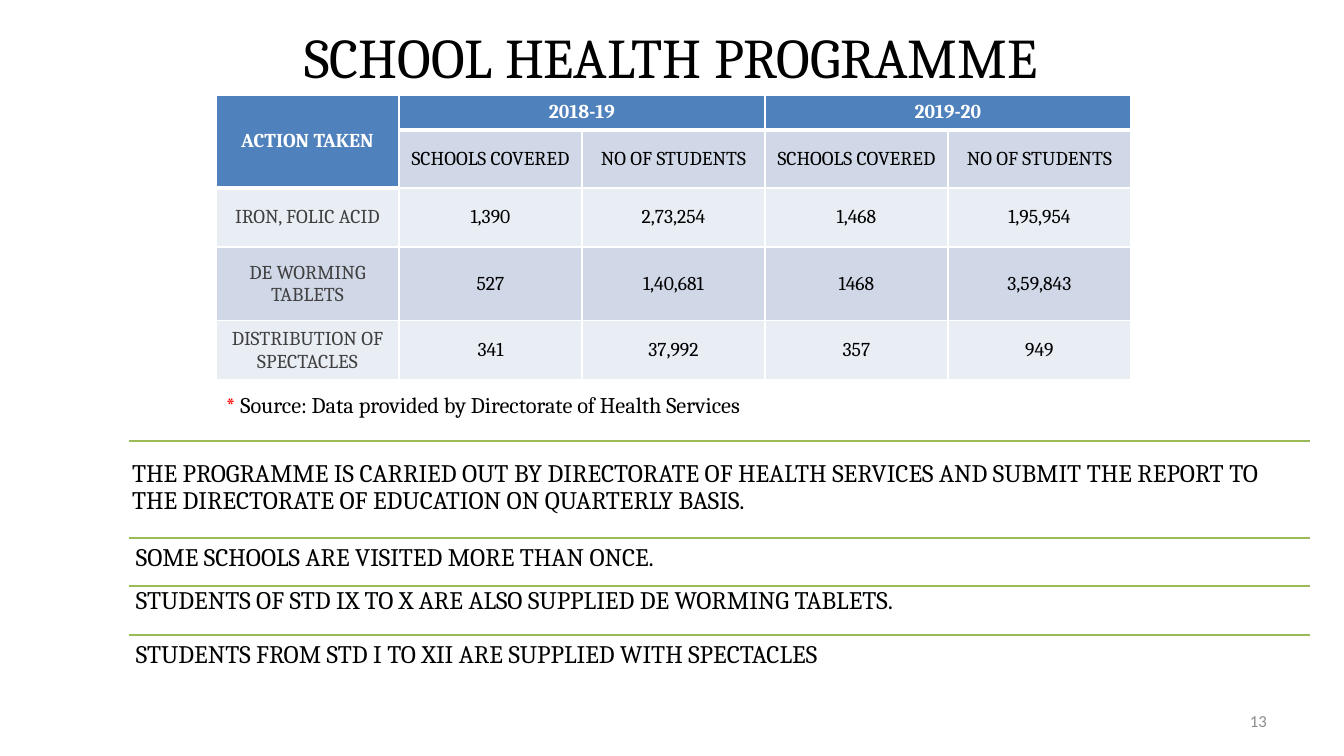
from dataclasses import dataclass

from lxml import etree
from pptx import Presentation
from pptx.dml.color import RGBColor
from pptx.enum.shapes import MSO_CONNECTOR
from pptx.enum.text import MSO_ANCHOR, PP_ALIGN
from pptx.oxml.ns import qn
from pptx.slide import Slide
from pptx.table import _Cell
from pptx.text.text import TextFrame
from pptx.util import Emu, Pt

STRAIGHT = MSO_CONNECTOR.STRAIGHT
TOP, MIDDLE = MSO_ANCHOR.TOP, MSO_ANCHOR.MIDDLE
LEFT, CENTER, RIGHT = PP_ALIGN.LEFT, PP_ALIGN.CENTER, PP_ALIGN.RIGHT

EMU_PER_PX = 914400 / 100.8


def px(n: int) -> Emu:
    return Emu(round(n * EMU_PER_PX))


@dataclass(frozen=True)
class Theme:
    font: str = "Cambria"
    number_font: str = "Calibri"
    black: str = "000000"
    white: str = "FFFFFF"
    red: str = "FF0000"
    grey: str = "8C8C8C"
    label: str = "404040"
    rule: str = "9BBB59"
    header: str = "4F81BD"
    band_dark: str = "D0D8E8"
    band_light: str = "E9EDF4"
    title_pt: int = 40
    body_pt: int = 18
    note_pt: int = 16
    table_pt: int = 14
    number_pt: int = 12
    rule_pt: int = 2
    border_pt: int = 1
    header_border_pt: int = 3


THEME = Theme()


@dataclass(frozen=True)
class Run:
    text: str
    size: int
    color: str = THEME.black
    bold: bool = False
    font: str = THEME.font


@dataclass(frozen=True)
class TextBox:
    left: int
    top: int
    width: int
    height: int
    runs: tuple[Run, ...]
    align: PP_ALIGN = LEFT
    anchor: MSO_ANCHOR = MIDDLE
    insets: tuple[int, int, int, int] = (10, 5, 10, 5)
    line_spacing: float = 1.0
    wrap: bool = True


@dataclass(frozen=True)
class Remark:
    """A statement under a green rule."""
    rule_y: int
    top: int
    height: int
    text: str
    inset: int = 7
    inset_top: int = 7


REMARK_LEFT, REMARK_WIDTH = 129, 1181
REMARKS = (
    Remark(441, 441, 97, "THE PROGRAMME IS CARRIED OUT BY DIRECTORATE OF HEALTH SERVICES AND "
           "SUBMIT THE REPORT TO THE DIRECTORATE OF EDUCATION ON QUARTERLY BASIS.", 3, 20),
    Remark(538, 538, 47, "SOME SCHOOLS ARE VISITED MORE THAN ONCE."),
    Remark(586, 581, 49, "STUDENTS OF STD IX TO X ARE ALSO SUPPLIED DE WORMING TABLETS."),
    Remark(635, 635, 98, "STUDENTS FROM STD I TO XII ARE SUPPLIED WITH SPECTACLES"),
)

TEXT_BOXES = (
    TextBox(118, 12, 1106, 88, (Run("SCHOOL HEALTH PROGRAMME", THEME.title_pt),), CENTER),
    TextBox(216, 386, 601, 37, (
        Run("* ", THEME.note_pt, THEME.red),
        Run("Source: Data provided by Directorate of Health Services", THEME.note_pt),
    ), anchor=TOP, wrap=False),
    TextBox(964, 701, 313, 40,
            (Run("13", THEME.number_pt, THEME.grey, font=THEME.number_font),), RIGHT),
)

TABLE_LEFT, TABLE_TOP, COLUMN_WIDTH = 216, 95, 183
ROW_HEIGHTS = (35, 58, 59, 74, 59)
MEASURES = ("SCHOOLS COVERED", "NO OF STUDENTS")
TABLE_ROWS = (
    ("ACTION TAKEN", "2018-19", "", "2019-20", ""),
    ("", *MEASURES, *MEASURES),
    ("IRON, FOLIC ACID", "1,390", "2,73,254", "1,468", "1,95,954"),
    ("DE WORMING TABLETS", "527", "1,40,681", "1468", "3,59,843"),
    ("DISTRIBUTION OF SPECTACLES", "341", "37,992", "357", "949"),
)
MERGES = (((0, 0), (1, 0)), ((0, 1), (0, 2)), ((0, 3), (0, 4)))


def add_runs(tf: TextFrame, runs: tuple[Run, ...], align: PP_ALIGN,
             line_spacing: float = 1.0) -> None:
    p = tf.paragraphs[0]
    p.alignment = align
    p.line_spacing = line_spacing
    for run in runs:
        r = p.add_run()
        r.text = run.text
        r.font.name = run.font
        r.font.size = Pt(run.size)
        r.font.bold = run.bold
        r.font.color.rgb = RGBColor.from_string(run.color)


def add_text(s: Slide, box: TextBox) -> None:
    sp = s.shapes.add_textbox(px(box.left), px(box.top), px(box.width), px(box.height))
    tf = sp.text_frame
    tf.word_wrap = box.wrap
    tf.vertical_anchor = box.anchor
    tf.margin_left, tf.margin_top, tf.margin_right, tf.margin_bottom = map(px, box.insets)
    add_runs(tf, box.runs, box.align, box.line_spacing)


def add_remark(s: Slide, remark: Remark) -> None:
    y = px(remark.rule_y)
    line = s.shapes.add_connector(STRAIGHT, px(REMARK_LEFT), y,
                                  px(REMARK_LEFT + REMARK_WIDTH), y)
    line.line.color.rgb = RGBColor.from_string(THEME.rule)
    line.line.width = Pt(THEME.rule_pt)
    etree.SubElement(line._element.spPr, qn("a:effectLst"))
    inset = remark.inset
    add_text(s, TextBox(REMARK_LEFT, remark.top, REMARK_WIDTH, remark.height,
                        (Run(remark.text, THEME.body_pt),), anchor=TOP,
                        insets=(inset, remark.inset_top, inset, inset), line_spacing=0.9))


def is_header(row: int, col: int) -> bool:
    return row == 0 or (row == 1 and col == 0)


def set_borders(cell: _Cell, row: int, col: int) -> None:
    """White borders, heavier where the header meets the body."""
    header = is_header(row, col)
    heavy_top = not header and is_header(row - 1, col)
    heavy_bottom = header and (col == 0 or row == 0)
    tc_pr = cell._tc.get_or_add_tcPr()
    for side, heavy in (("L", False), ("R", False), ("T", heavy_top), ("B", heavy_bottom)):
        width = THEME.header_border_pt if heavy else THEME.border_pt
        ln = etree.SubElement(tc_pr, qn(f"a:ln{side}"), w=str(Pt(width)))
        fill = etree.SubElement(ln, qn("a:solidFill"))
        etree.SubElement(fill, qn("a:srgbClr"), val=THEME.white)


def fill_cell(cell: _Cell, row: int, col: int, text: str) -> None:
    if is_header(row, col):
        fill, color = THEME.header, THEME.white
    else:
        fill = THEME.band_dark if row % 2 else THEME.band_light
        color = THEME.black if col else THEME.label
    set_borders(cell, row, col)
    cell.fill.solid()
    cell.fill.fore_color.rgb = RGBColor.from_string(fill)
    cell.vertical_anchor = MIDDLE
    cell.margin_left = cell.margin_right = px(10)
    cell.margin_top = cell.margin_bottom = px(4)
    if text:
        run = Run(text, THEME.table_pt, color, is_header(row, col))
        add_runs(cell.text_frame, (run,), CENTER)


def add_coverage_table(s: Slide) -> None:
    rows, cols = len(TABLE_ROWS), len(TABLE_ROWS[0])
    table = s.shapes.add_table(rows, cols, px(TABLE_LEFT), px(TABLE_TOP),
                               px(COLUMN_WIDTH * cols), px(sum(ROW_HEIGHTS))).table
    for column in table.columns:
        column.width = px(COLUMN_WIDTH)
    for row, height in zip(table.rows, ROW_HEIGHTS):
        row.height = px(height)
    for first, last in MERGES:
        table.cell(*first).merge(table.cell(*last))
    for i, texts in enumerate(TABLE_ROWS):
        for j, text in enumerate(texts):
            fill_cell(table.cell(i, j), i, j, text)


def main() -> None:
    prs = Presentation()
    prs.slide_width, prs.slide_height = px(1344), px(756)
    s = prs.slides.add_slide(prs.slide_layouts[6])
    for remark in REMARKS:
        add_remark(s, remark)
    add_coverage_table(s)
    for box in TEXT_BOXES:
        add_text(s, box)
    prs.save("out.pptx")


if __name__ == "__main__":
    main()
